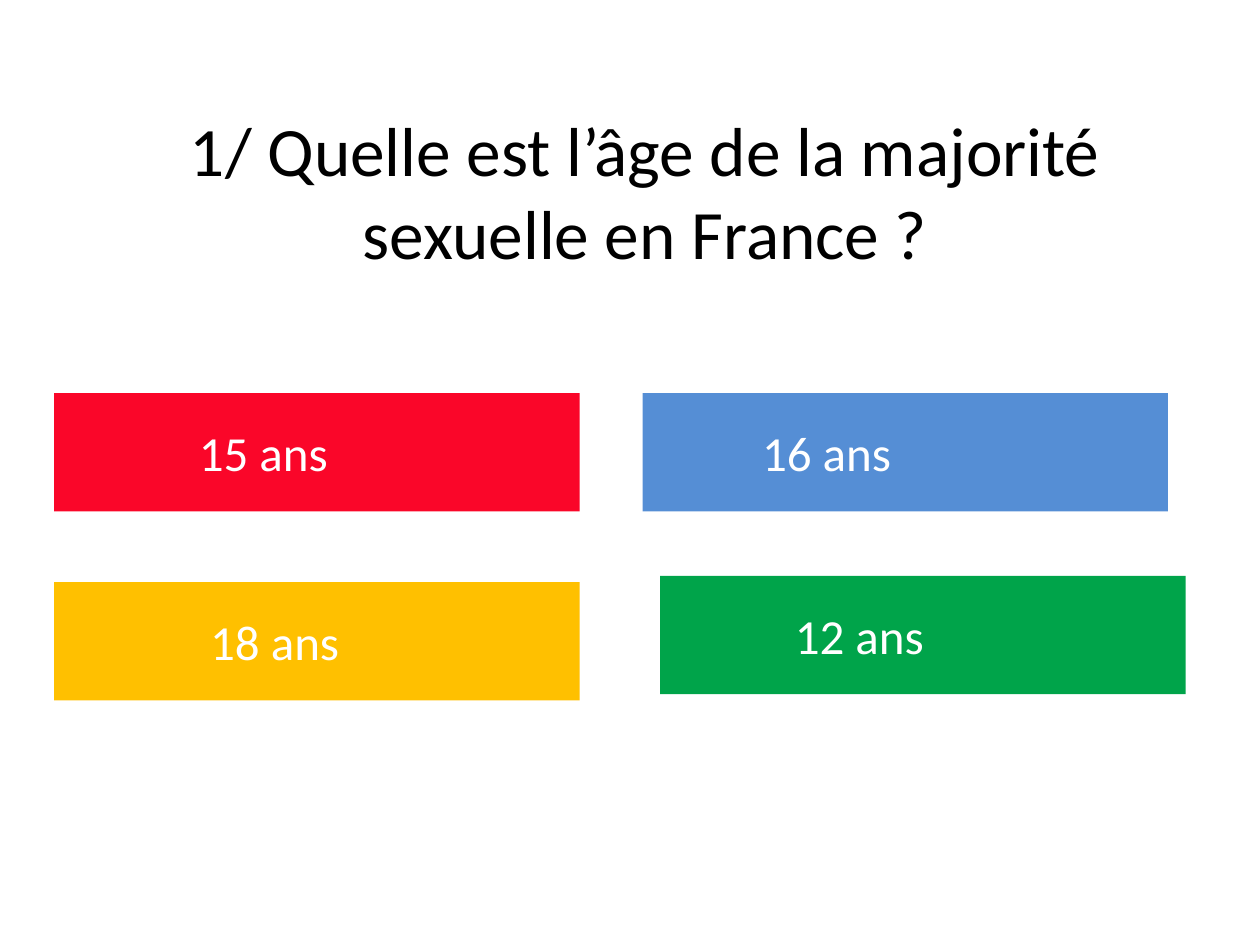
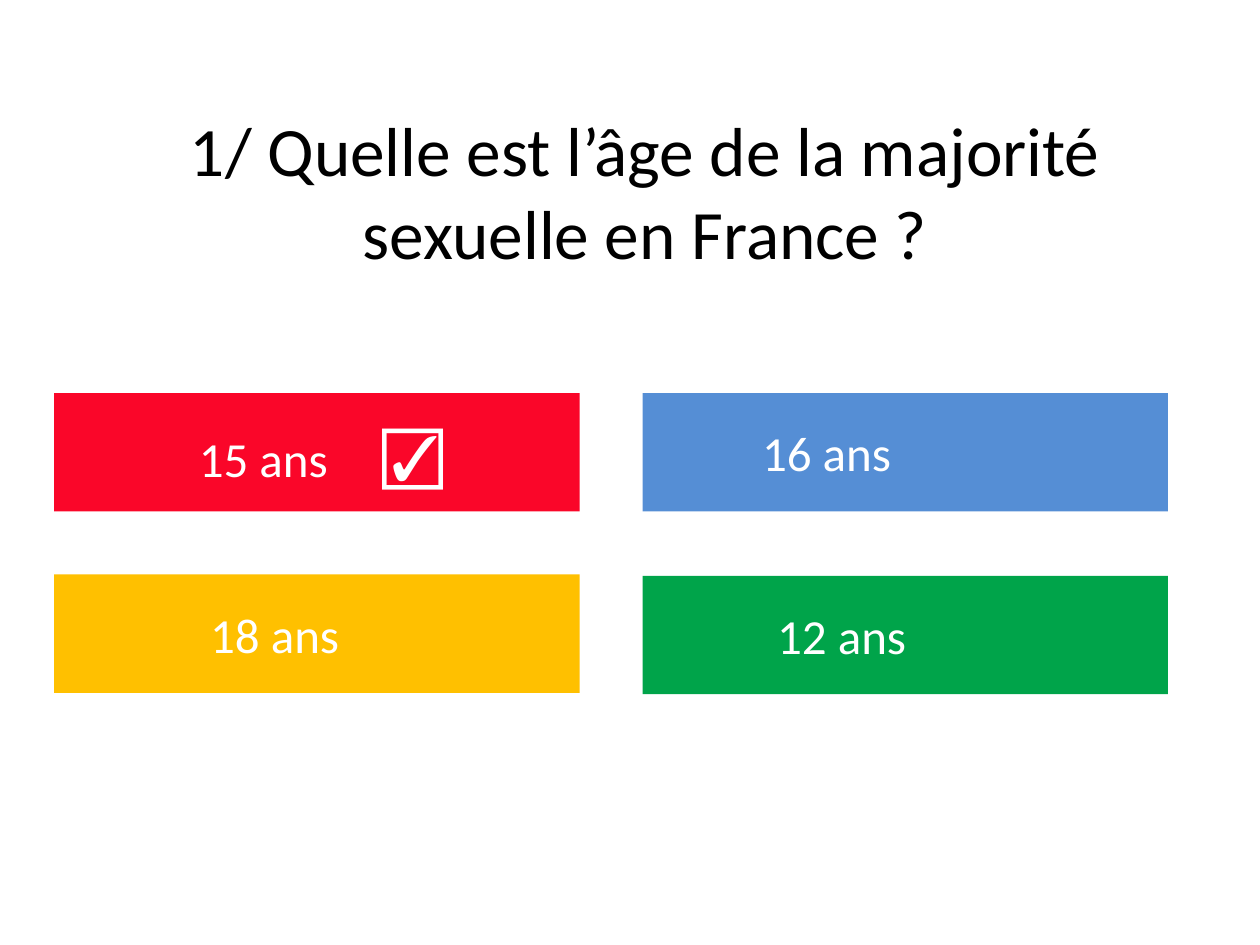
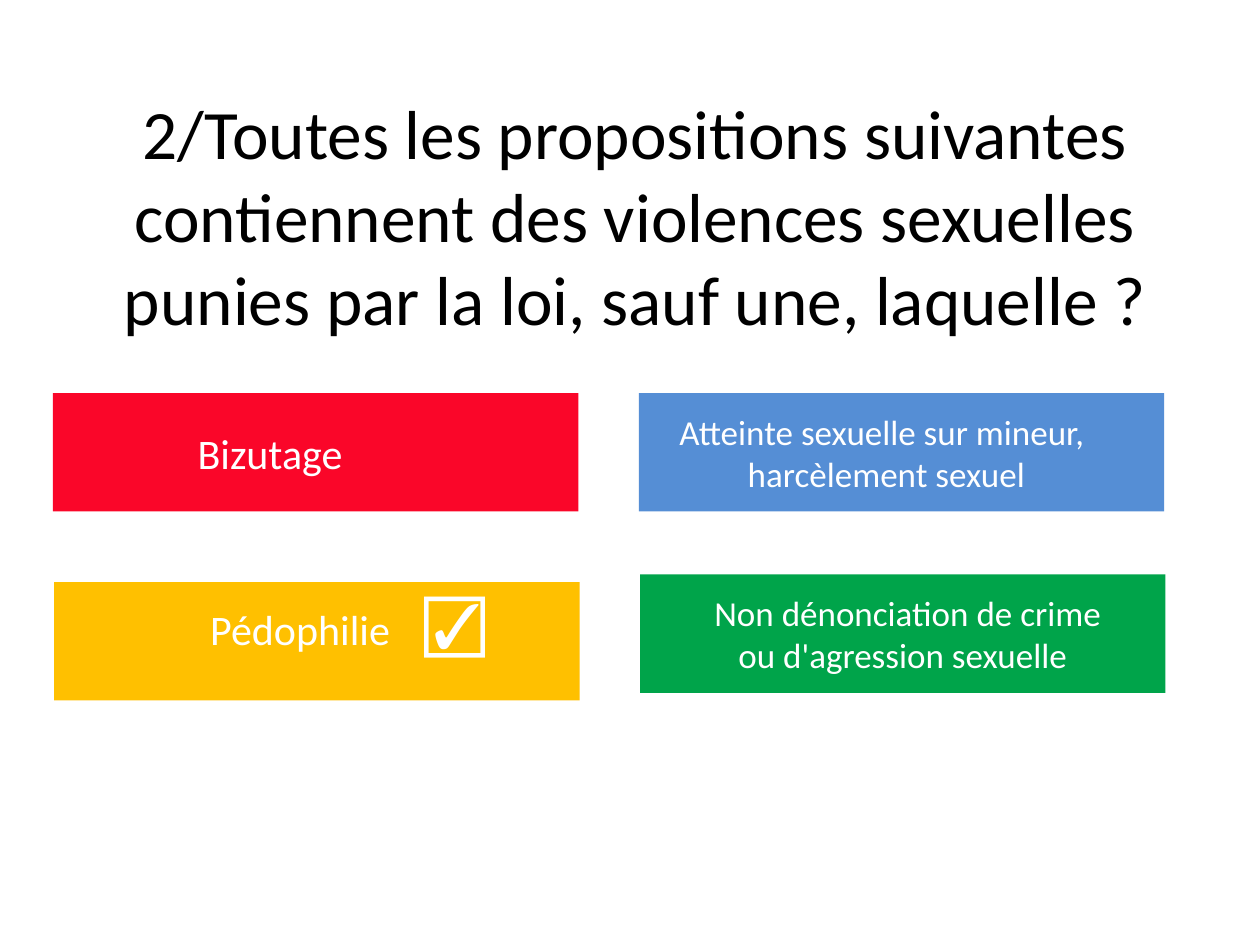
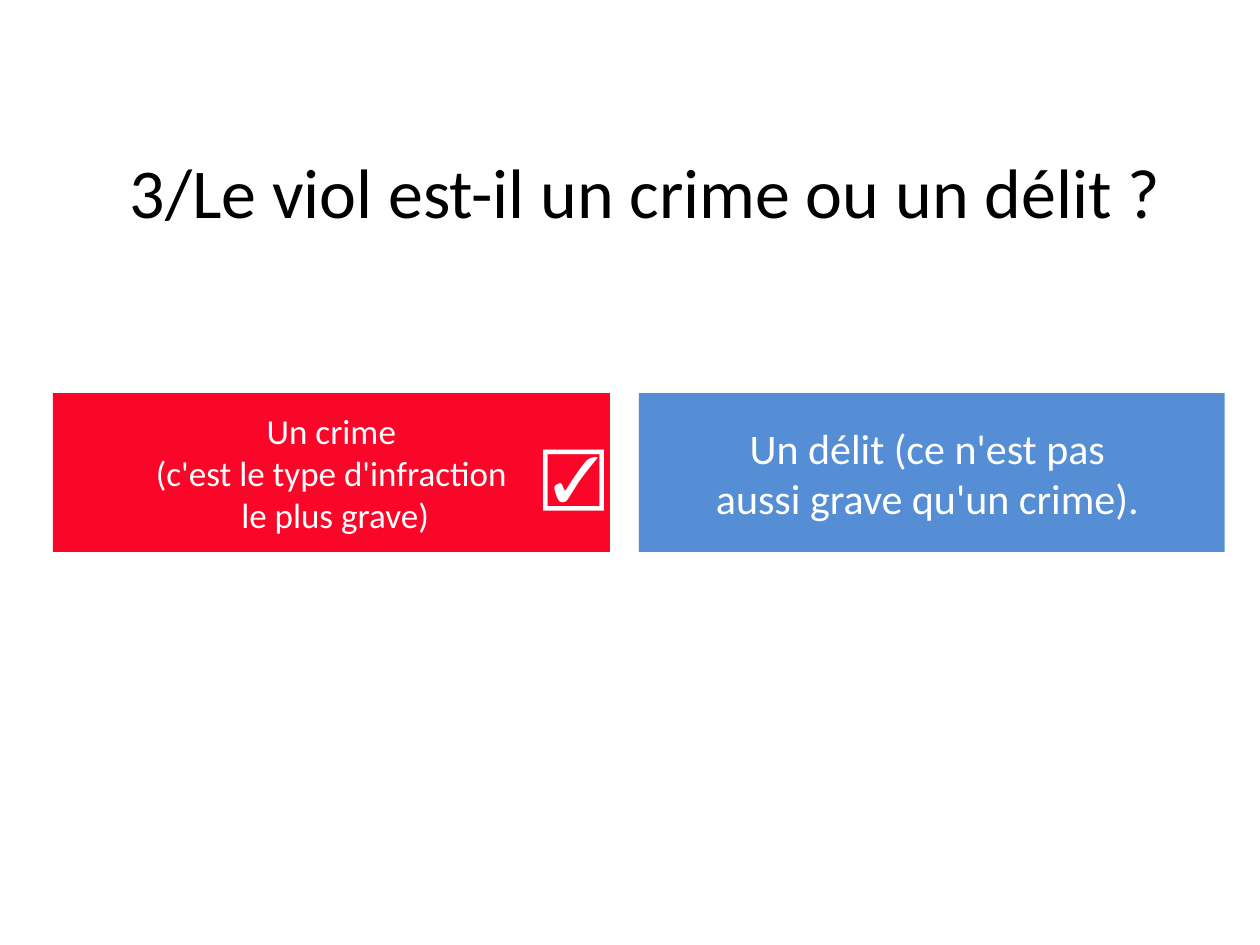
"""Build a four-slide quiz with coloured answer boxes."""
from lxml.etree import SubElement
from pptx import Presentation
from pptx.dml.color import RGBColor
from pptx.enum.shapes import MSO_SHAPE
from pptx.enum.text import MSO_ANCHOR, PP_ALIGN
from pptx.oxml.ns import qn
from pptx.util import Inches, Pt

WHITE, BLACK = "FFFFFF", "000000"
RED, BLUE, YELLOW, GREEN = "FA0629", "558ED5", "FFC000", "00A44A"
LEFT, CENTER = PP_ALIGN.LEFT, PP_ALIGN.CENTER
CHECK = ("☑", 36)
AGE_QUESTION = "1/ Quelle est l’âge de la majorité sexuelle en France ?"
AGES = [
    (RED, "15 ans", 1.05),
    (BLUE, "16 ans", 0.85),
    (YELLOW, "18 ans", 1.14),
    (GREEN, "12 ans", 0.97),
]


def rgb(value):
    return RGBColor.from_string(value)


def add_box(s, box, fill, align, lines, color=WHITE):
    sp = s.shapes.add_shape(MSO_SHAPE.RECTANGLE, *map(Inches, box))
    sp.shadow.inherit = False
    sp.line.fill.background()
    if fill:
        sp.fill.solid()
        sp.fill.fore_color.rgb = rgb(fill)
    else:
        sp.fill.background()
    tf = sp.text_frame
    for name, value in {"word_wrap": True, "vertical_anchor": MSO_ANCHOR.MIDDLE}.items():
        setattr(tf, name, value)
    for i, (shift, runs) in enumerate(lines):
        p = tf.add_paragraph() if i else tf.paragraphs[0]
        p.alignment = align
        pPr = p._p.get_or_add_pPr()
        if align == LEFT:
            pPr.set("marL", "0")
            pPr.set("indent", str(Inches(shift)))
        elif shift:
            pPr.set("marL" if shift > 0 else "marR", str(Inches(abs(shift))))
        for text, size in runs:
            r = p.add_run()
            r.text = text
            for name, value in {"name": "Calibri", "size": Pt(size)}.items():
                setattr(r.font, name, value)
            r.font.color.rgb = rgb(color)
    return sp


def_tabs = {RED: 3.3, YELLOW: 3.24}
age_spots = [
    [(0.43, 3.12), (5.1, 3.12), (0.43, 4.62), (5.24, 4.57)],
    [(0.43, 3.12), (5.1, 3.12), (0.43, 4.56), (5.1, 4.57)],
]
quiz = []
for spots in age_spots:
    answers = [
        ((x, y, 4.17, 0.94), fill, LEFT, [(indent, [(text, 28)])])
        for (x, y), (fill, text, indent) in zip(spots, AGES)
    ]
    quiz.append(((0.75, 0.76, 8.74, 1.5), AGE_QUESTION, 39.6, answers, None))
quiz[1] = (*quiz[1][:4], RED)

quiz.append((
    (0.59, 0.76, 8.9, 1.89),
    "2/Toutes les propositions suivantes contiennent des violences sexuelles "
    "punies par la loi, sauf une, laquelle ?",
    39.6,
    [
        ((0.42, 3.12, 4.17, 0.94), RED, LEFT, [(1.05, [("Bizutage", 24)])]),
        ((5.07, 3.12, 4.17, 0.94), BLUE, CENTER, [
            (-0.31, [("Atteinte sexuelle sur mineur,", 20)]),
            (0.07, [("harcèlement sexuel", 20)]),
        ]),
        ((0.43, 4.62, 4.17, 0.94), YELLOW, LEFT, [(1.14, [("Pédophilie", 24)])]),
        ((5.08, 4.56, 4.17, 0.94), GREEN, CENTER, [
            (0.08, [("Non dénonciation de crime", 20)]),
            (0, [("ou d'agression sexuelle", 20)]),
        ]),
    ],
    YELLOW,
))
quiz.append((
    (0.59, 0.76, 9.06, 1.5),
    "3/Le viol est-il un crime ou un délit ?",
    40,
    [
        ((0.42, 3.12, 4.42, 1.26), RED, CENTER, [
            (0, [("Un crime", 20)]),
            (0, [("(c'est le type d'infraction", 20)]),
            (0.06, [("le plus grave)", 20)]),
        ]),
        ((5.07, 3.12, 4.65, 1.26), BLUE, CENTER, [
            (-0.07, [("Un délit (ce n'est pas", 24)]),
            (0, [("aussi grave qu'un crime).", 24)]),
        ]),
        ((4.21, 3.4, 0.39, 0.71), None, LEFT, [(0, [CHECK])]),
    ],
    None,
))

prs = Presentation()
prs.slide_width, prs.slide_height = Inches(10), Inches(7.5)
for title_box, question, size, answers, correct in quiz:
    s = prs.slides.add_slide(prs.slide_layouts[6])
    add_box(s, title_box, WHITE, CENTER, [(0, [(question, size)])], BLACK)
    for box, fill, align, lines in answers:
        if fill and fill == correct:
            indent, runs = lines[0]
            lines = [(indent, [*runs, ("\t", 24), CHECK])]
        sp = add_box(s, box, fill, align, lines)
        if fill and fill == correct:
            tf = sp.text_frame
            tabs = SubElement(tf.paragraphs[0]._p.pPr, qn("a:tabLst"))
            SubElement(tabs, qn("a:tab"), pos=str(Inches(def_tabs[fill])), algn="l")
            if fill == YELLOW:
                tf.vertical_anchor = MSO_ANCHOR.TOP
                tf.margin_top = 0
prs.save("out.pptx")
